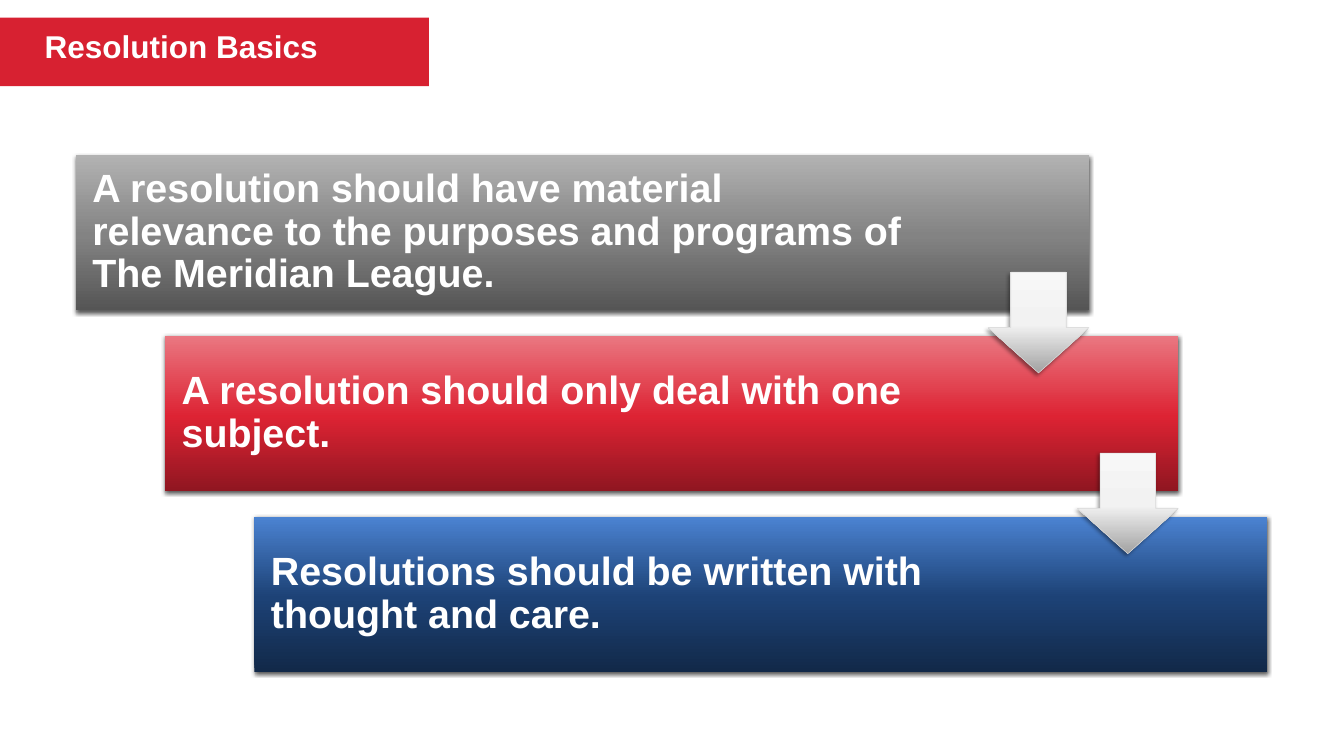
from typing import NamedTuple

import pptx
import pptx.dml.color
import pptx.enum.shapes
import pptx.enum.text
import pptx.oxml.ns
import pptx.oxml.xmlchemy
import pptx.util
from lxml import etree

Cm = pptx.util.Cm
Pt = pptx.util.Pt
RGBColor = pptx.dml.color.RGBColor
MSO_SHAPE = pptx.enum.shapes.MSO_SHAPE
MSO_ANCHOR = pptx.enum.text.MSO_ANCHOR
qn = pptx.oxml.ns.qn

WHITE = RGBColor(0xFF, 0xFF, 0xFF)
BLACK = RGBColor(0x00, 0x00, 0x00)
RED = RGBColor(0xD7, 0x21, 0x31)
ARROW_EDGE = RGBColor(0xD9, 0xD9, 0xD9)


class Gradient(NamedTuple):
    bottom: RGBColor
    middle: RGBColor
    top: RGBColor


class Shadow(NamedTuple):
    opacity: int
    blur: float
    distance: float
    angle: int


class Step(NamedTuple):
    text: str
    gradient: Gradient
    text_width: float


GRAY_FADE = Gradient(RGBColor(0x55, 0x55, 0x55), RGBColor(0x83, 0x83, 0x83), RGBColor(0xB2, 0xB2, 0xB2))
RED_FADE = Gradient(RGBColor(0x90, 0x16, 0x21), RGBColor(0xDD, 0x23, 0x33), RGBColor(0xEA, 0x77, 0x81))
BLUE_FADE = Gradient(RGBColor(0x12, 0x29, 0x49), RGBColor(0x1D, 0x42, 0x76), RGBColor(0x4B, 0x83, 0xD2))
ARROW_FADE = Gradient(RGBColor(0xA2, 0xA2, 0xA2), RGBColor(0xF2, 0xF2, 0xF2), RGBColor(0xF7, 0xF7, 0xF7))

STEP_SHADOW = Shadow(63, 4.5, 1.5, 90)
ARROW_SHADOW = Shadow(40, 4, 3, 135)

STEPS = [
    Step("A resolution should have material relevance to the purposes and programs of The Meridian League.",
         GRAY_FADE, 30.3),
    Step("A resolution should only deal with one subject.", RED_FADE, 29.16),
    Step("Resolutions should be written with thought and care.", BLUE_FADE, 29.16),
]

# Staircase measures in centimetres
STEP_LEFT, STEP_TOP = 2.72, 5.56
STEP_WIDTH, STEP_HEIGHT = 36.3, 5.56
SHIFT_X, SHIFT_Y = 3.2, 6.48
TEXT_OFFSET = 0.16
ARROW_SIZE, ARROW_DROP = 3.61, 4.2


def add_shape(slide, kind, left: float, top: float, width: float, height: float):
    """Add a preset shape without line or shadow."""
    sp = slide.shapes.add_shape(kind, Cm(left), Cm(top), Cm(width), Cm(height))
    sp.shadow.inherit = False
    sp.line.fill.background()
    return sp


def add_color(parent, color: RGBColor):
    return etree.SubElement(parent, qn("a:srgbClr"), val=str(color))


def set_gradient(sp, gradient: Gradient) -> None:
    sp.fill.gradient()
    sp.fill.gradient_angle = 90
    stops = sp._element.spPr.find(f".//{qn('a:gsLst')}")
    for stop in list(stops):
        stops.remove(stop)
    for position, color in zip((0, 48, 100), gradient):
        add_color(etree.SubElement(stops, qn("a:gs"), pos=str(position * 1000)), color)


def set_shadow(sp, shadow: Shadow) -> None:
    effects = sp._element.spPr.find(qn("a:effectLst"))
    outer = etree.SubElement(
        effects, qn("a:outerShdw"), blurRad=str(Pt(shadow.blur)), dist=str(Pt(shadow.distance)),
        dir=str(shadow.angle * 60000), rotWithShape="0")
    etree.SubElement(add_color(outer, BLACK), qn("a:alpha"), val=str(shadow.opacity * 1000))


def add_text(slide, text: str, left: float, top: float, width: float, height: float, *,
             size: float, spacing: float, anchor=MSO_ANCHOR.TOP,
             inset_x: float = 0.25, inset_y: float = 0.13) -> None:
    """Add a text box in bold white Arial."""
    tf = slide.shapes.add_textbox(Cm(left), Cm(top), Cm(width), Cm(height)).text_frame
    tf.word_wrap = True
    tf.vertical_anchor = anchor
    tf.margin_left = tf.margin_right = Cm(inset_x)
    tf.margin_top = tf.margin_bottom = Cm(inset_y)
    p = tf.paragraphs[0]
    p.line_spacing = spacing
    r = p.add_run()
    r.text = text
    r.font.name = "Arial"
    r.font.size = Pt(size)
    r.font.bold = True
    r.font.color.rgb = WHITE


def add_step(slide, step: Step, left: float, top: float) -> None:
    sp = add_shape(slide, MSO_SHAPE.RECTANGLE, left, top, STEP_WIDTH, STEP_HEIGHT)
    set_gradient(sp, step.gradient)
    set_shadow(sp, STEP_SHADOW)
    add_text(slide, step.text, left + TEXT_OFFSET, top + TEXT_OFFSET, step.text_width,
             STEP_HEIGHT - 2 * TEXT_OFFSET, size=40, spacing=0.9,
             anchor=MSO_ANCHOR.MIDDLE, inset_x=0.43, inset_y=0.43)


def add_arrow(slide, left: float, top: float) -> None:
    sp = add_shape(slide, MSO_SHAPE.DOWN_ARROW, left, top, ARROW_SIZE, ARROW_SIZE)
    sp.adjustments[0] = 0.55
    sp.adjustments[1] = 0.45
    set_gradient(sp, ARROW_FADE)
    sp.line.color.rgb = ARROW_EDGE
    sp.line.width = Pt(0.5)
    set_shadow(sp, ARROW_SHADOW)


def main() -> None:
    prs = pptx.Presentation()
    prs.slide_width, prs.slide_height = Cm(48.16), Cm(27.1)
    slide = prs.slides.add_slide(prs.slide_layouts[6])

    banner = add_shape(slide, MSO_SHAPE.RECTANGLE, 0, 0.63, 15.37, 2.46)
    banner.fill.solid()
    banner.fill.fore_color.rgb = RED
    add_text(slide, "Resolution Basics", 1.35, 1.09, 11.56, 1.45, size=32, spacing=0.8)

    corners = [(STEP_LEFT + i * SHIFT_X, STEP_TOP + i * SHIFT_Y) for i in range(len(STEPS))]
    for step, (left, top) in zip(STEPS, corners):
        add_step(slide, step, left, top)
    for left, top in corners[:-1]:
        add_arrow(slide, left + STEP_WIDTH - ARROW_SIZE, top + ARROW_DROP)

    prs.save("out.pptx")


if __name__ == "__main__":
    main()
